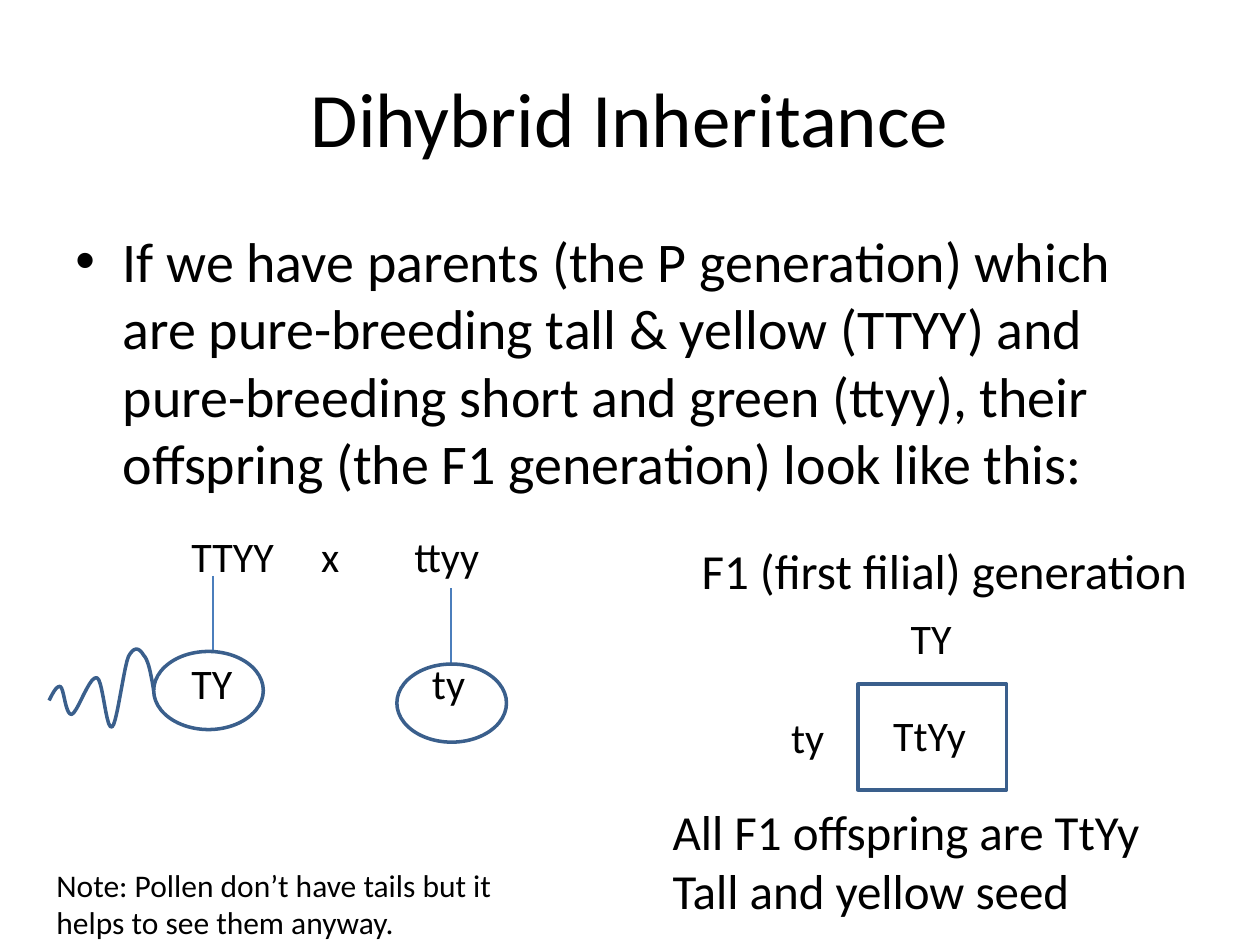
from lxml import etree
from pptx import Presentation
from pptx.dml.color import RGBColor
from pptx.enum.shapes import MSO_CONNECTOR, MSO_SHAPE
from pptx.enum.text import MSO_ANCHOR, PP_ALIGN
from pptx.oxml.ns import qn
from pptx.util import Inches, Pt

LEFT, CENTER = PP_ALIGN.LEFT, PP_ALIGN.CENTER
TOP, MIDDLE = MSO_ANCHOR.TOP, MSO_ANCHOR.MIDDLE
OVAL, RECT = MSO_SHAPE.OVAL, MSO_SHAPE.RECTANGLE
STRAIGHT = MSO_CONNECTOR.STRAIGHT

COLORS = {"text": "000000", "shape": "3A5F8C", "stem": "4B7EBC"}
FONT = "Calibri"

# The slide is a grid of 100 columns by 75 rows of square cells.
COLS, ROWS = 100, 75
CELL = Inches(0.1)

deck = Presentation()
deck.slide_width = COLS * CELL
deck.slide_height = ROWS * CELL
slide = deck.slides.add_slide(deck.slide_layouts[6])
shapes = slide.shapes


def cells(*nums):
    return [round(n * CELL) for n in nums]


def write(text, at, size=24, align=LEFT, anchor=TOP, wrap=True,
          bullet=None, before=0, tabs=()):
    """Add a text box; bullet is (mark, indent), tabs are stops, in cells."""
    frame = shapes.add_textbox(*cells(*at)).text_frame
    frame.word_wrap = wrap
    frame.vertical_anchor = anchor
    for i, line in enumerate(text.split("\n")):
        para = frame.paragraphs[0] if i == 0 else frame.add_paragraph()
        para.alignment = align
        para.space_before = Pt(before)
        run = para.add_run()
        run.text = line
        run.font.size = Pt(size)
        run.font.name = FONT
        run.font.color.rgb = RGBColor.from_string(COLORS["text"])
        props = para._p.get_or_add_pPr()
        if bullet:
            mark, indent = bullet
            gap = cells(indent)[0]
            props.set("marL", str(gap))
            props.set("indent", str(-gap))
            etree.SubElement(props, qn("a:buFont"), typeface="Arial")
            etree.SubElement(props, qn("a:buChar"), char=mark)
        if tabs:
            stops = etree.SubElement(props, qn("a:tabLst"))
            for stop in cells(*tabs):
                etree.SubElement(stops, qn("a:tab"), pos=str(stop), algn="l")


# Title and body
write("Dihybrid Inheritance", (5, 3, 90, 12.5), size=44,
      align=CENTER, anchor=MIDDLE)
write("If we have parents (the P generation) which are pure-breeding tall & "
      "yellow (TTYY) and pure-breeding short and green (ttyy), their "
      "offspring (the F1 generation) look like this:",
      (5, 17.5, 90, 49.5), size=32, bullet=("•", 3.75), before=6.4)

# Parents, with a stem down to each gamete
write("TTYY\tx\tttyy", (14.2, 41.6, 25.2, 5), tabs=(10.3, 17.7))
for x, y in ((16.9, 45.7), (35.8, 46.7)):
    stem = shapes.add_connector(STRAIGHT, *cells(x, y, x, y + 6))
    stem.line.color.rgb = RGBColor.from_string(COLORS["stem"])
    stem.line.width = Pt(0.75)
    etree.SubElement(stem._element.spPr, qn("a:effectLst"))
write("TY\tty", (14.2, 51.7, 23.8, 5), tabs=(19.1,))

# Gametes and the offspring square
forms = [shapes.add_shape(kind, *cells(*at)) for kind, at in (
    (OVAL, (12.2, 51.7, 8.7, 6.2)),
    (OVAL, (31.5, 52.7, 8.7, 6.2)),
    (RECT, (68.1, 54.3, 11.8, 8.4)),
)]

# Pollen tail: Bezier curves, each given by two handles and an end
STEPS = 10
start = (12.2, 54.8)
curves = (
    ((12, 53.6), (11.8, 52.4), (11.4, 52)),
    ((11.1, 51.5), (10.7, 51.2), (10.2, 52.1)),
    ((9.8, 53.1), (9.3, 57.4), (8.9, 57.7)),
    ((8.4, 58), (8.2, 54), (7.7, 53.8)),
    ((7.1, 53.6), (6.2, 56.5), (5.7, 56.7)),
    ((5.2, 56.8), (5.1, 54.7), (4.8, 54.5)),
    ((4.5, 54.4), (4.2, 55), (3.9, 55.6)),
)
points, last = [], start
for one, two, end in curves:
    for step in range(1, STEPS + 1):
        t = step / STEPS
        u = 1 - t
        points.append(cells(*(
            u**3 * a + 3 * u * u * t * b + 3 * u * t * t * c + t**3 * d
            for a, b, c, d in zip(last, one, two, end))))
    last = end
tail = shapes.build_freeform(*cells(*start))
tail.add_line_segments(points, close=False)
forms.append(tail.convert_to_shape())

for form in forms:
    form.shadow.inherit = False
    form.fill.background()
    form.line.color.rgb = RGBColor.from_string(COLORS["shape"])
    form.line.width = Pt(2)

# Note and offspring labels
write("Note: Pollen don’t have tails but it helps to see them anyway.",
      (3.5, 68.2, 39.3, 7.1), size=18)
for text, at, size in (
    ("TY", (71.3, 48.1, 5.3, 5), 24),
    ("ty", (61.8, 56, 4.7, 5), 24),
    ("TtYy", (69.9, 55.8, 7.9, 5), 24),
    ("F1 (first filial) generation", (54.7, 42.4, 41, 5.7), 28),
    ("All F1 offspring are TtYy\nTall and yellow seed",
     (52.4, 63.1, 39.5, 10.4), 28),
):
    write(text, at, size=size, wrap=False)

deck.save("out.pptx")
